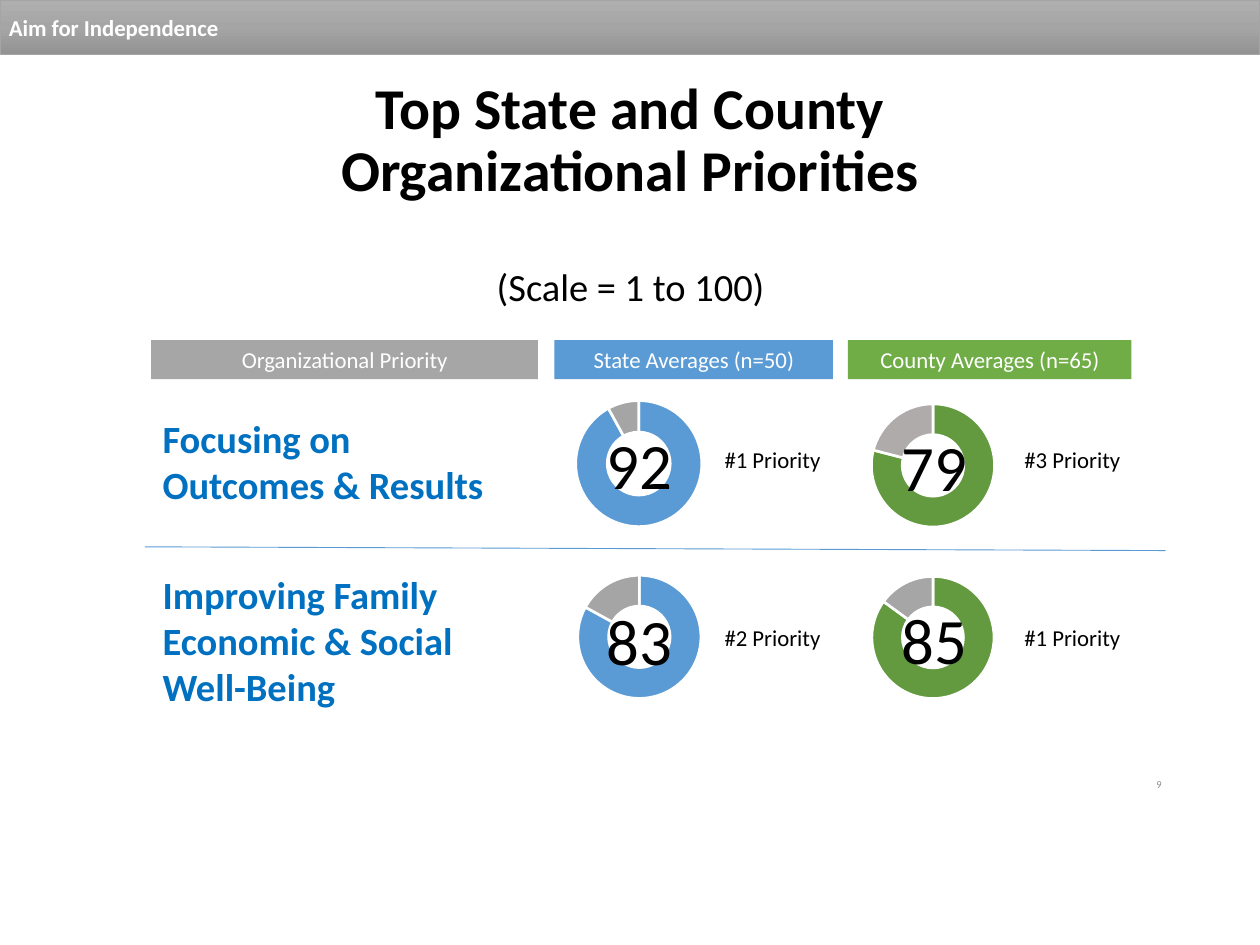
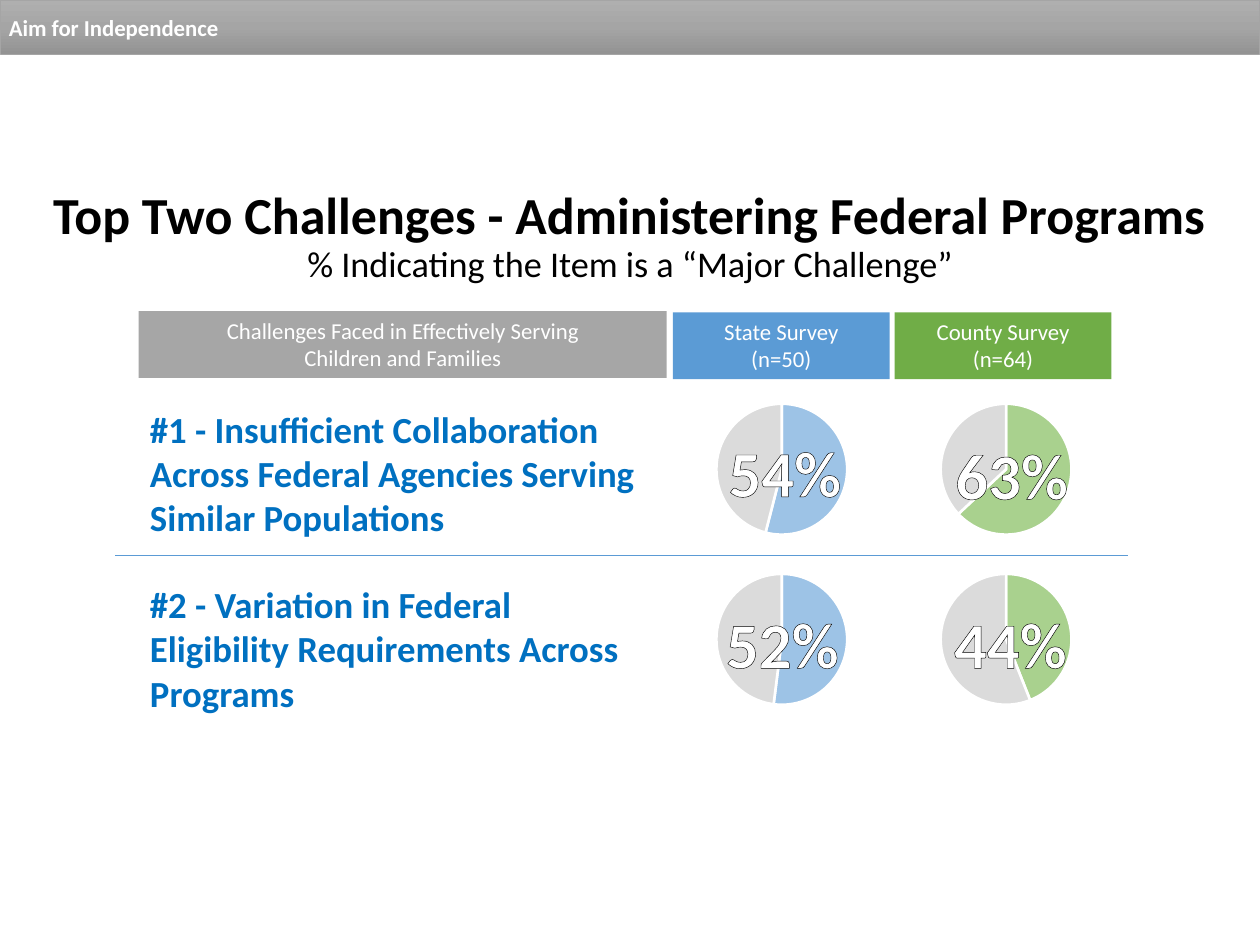
from copy import deepcopy
from dataclasses import dataclass

from lxml import etree
from pptx import Presentation
from pptx.chart.data import CategoryChartData
from pptx.dml.color import RGBColor
from pptx.enum.chart import XL_CHART_TYPE
from pptx.enum.shapes import MSO_CONNECTOR, MSO_SHAPE
from pptx.enum.text import MSO_ANCHOR, MSO_AUTO_SIZE, PP_ALIGN
from pptx.oxml.ns import qn
from pptx.util import Emu, Inches, Pt

DOUGHNUT, PIE = XL_CHART_TYPE.DOUGHNUT, XL_CHART_TYPE.PIE
RECTANGLE, STRAIGHT = MSO_SHAPE.RECTANGLE, MSO_CONNECTOR.STRAIGHT
TOP, MIDDLE = MSO_ANCHOR.TOP, MSO_ANCHOR.MIDDLE
LEFT, CENTER, RIGHT = PP_ALIGN.LEFT, PP_ALIGN.CENTER, PP_ALIGN.RIGHT
FIXED_SIZE = MSO_AUTO_SIZE.NONE

BLACK = RGBColor(0x00, 0x00, 0x00)
WHITE = RGBColor(0xFF, 0xFF, 0xFF)
STATE_BLUE = RGBColor(0x5B, 0x9B, 0xD5)
COUNTY_GREEN = RGBColor(0x70, 0xAD, 0x47)
DEEP_GREEN = RGBColor(0x63, 0x9A, 0x3F)
PALE_BLUE = RGBColor(0x9D, 0xC3, 0xE6)
PALE_GREEN = RGBColor(0xA9, 0xD1, 0x8E)
TOPIC_BLUE = RGBColor(0x00, 0x70, 0xC0)
BAND_LIGHT = RGBColor(0xAF, 0xAF, 0xAF)
BAND_DARK = RGBColor(0x93, 0x93, 0x93)
GRAY = RGBColor(0xA5, 0xA5, 0xA5)
HEADING_GRAY = RGBColor(0xA6, 0xA6, 0xA6)
WARM_GRAY = RGBColor(0xAF, 0xAB, 0xAB)
PALE_GRAY = RGBColor(0xDB, 0xDB, 0xDB)
PAGE_GRAY = RGBColor(0x8C, 0x8C, 0x8C)

FONT = "Calibri"
SLIDE_WIDTH, SLIDE_HEIGHT = Inches(10), Inches(7.5)
COLUMN, ROW = SLIDE_WIDTH / 100, SLIDE_HEIGHT / 75
PLOT_SHARE = 0.77


@dataclass(frozen=True)
class Box:
    """A place on the grid of 100 columns and 75 rows."""
    left: float
    top: float
    width: float
    height: float

    def lengths(self) -> tuple[Emu, Emu, Emu, Emu]:
        return (Emu(round(self.left * COLUMN)), Emu(round(self.top * ROW)),
                Emu(round(self.width * COLUMN)), Emu(round(self.height * ROW)))


@dataclass(frozen=True)
class TextStyle:
    size: float
    color: RGBColor = BLACK
    bold: bool = False
    align: PP_ALIGN = CENTER
    outlined: bool = False


@dataclass(frozen=True)
class Label:
    text: str
    box: Box
    style: TextStyle


@dataclass(frozen=True)
class Heading:
    text: str
    box: Box
    fill: RGBColor


@dataclass(frozen=True)
class Score:
    value: int
    chart: Box
    number: Box
    fill: RGBColor
    rest: RGBColor


@dataclass(frozen=True)
class SurveySlide:
    title_box: Box
    title_lines: list[tuple[str, TextStyle]]
    chart_type: XL_CHART_TYPE
    number_format: str
    number_style: TextStyle
    scores: list[Score]
    headings: list[Heading]
    labels: list[Label]
    divider: tuple[float, float, float, float]


BAND_TEXT = TextStyle(13, WHITE, bold=True, align=LEFT)
HEADING_TEXT = TextStyle(13, WHITE)
RANK = TextStyle(13)
PRIORITY = TextStyle(22, TOPIC_BLUE, bold=True, align=LEFT)
CHALLENGE = TextStyle(21, TOPIC_BLUE, bold=True, align=LEFT)
TITLE = TextStyle(33, bold=True)

RANK_TEXTS = {
    (55.9, 35): "#1 Priority", (79.7, 35): "#3 Priority",
    (55.9, 49.1): "#2 Priority", (79.7, 49.1): "#1 Priority",
}


def pie_score(value: int, column: int, row: int, number_left: float, number_top: float) -> Score:
    return Score(value, Box(55.4 + 17.8 * column, 30.5 + 13.5 * row, 13.3, 13.5),
                 Box(number_left, number_top, 13, 7.1),
                 (PALE_BLUE, PALE_GREEN)[column], PALE_GRAY)


SURVEY_SLIDES = [
    SurveySlide(
        title_box=Box(6.9, 4, 86.2, 14.5),
        title_lines=[("Top State and County", TITLE), ("Organizational Priorities", TITLE)],
        chart_type=DOUGHNUT,
        number_format="{}",
        number_style=TextStyle(37),
        scores=[
            Score(92, Box(40.2, 30.3, 21, 13), Box(42.3, 33.3, 16.9, 7.1), STATE_BLUE, GRAY),
            Score(79, Box(63.9, 30.6, 20.3, 12.7), Box(65.7, 33.5, 16.9, 7.1),
                  DEEP_GREEN, WARM_GRAY),
            Score(83, Box(40.6, 44.2, 20.3, 12.7), Box(42.3, 47.3, 16.9, 7.1), STATE_BLUE, GRAY),
            Score(85, Box(63.8, 44.3, 20.5, 12.6), Box(65.7, 47.2, 16.9, 7.1),
                  DEEP_GREEN, HEADING_GRAY),
        ],
        headings=[
            Heading("Organizational Priority", Box(12, 27, 30.7, 3.1), HEADING_GRAY),
            Heading("State Averages (n=50)", Box(44, 27, 22.1, 3.1), STATE_BLUE),
            Heading("County Averages (n=65)", Box(67.3, 27, 22.5, 3.1), COUNTY_GREEN),
        ],
        labels=[
            Label("(Scale = 1 to 100)", Box(32.3, 20.5, 35.5, 4.6), TextStyle(22)),
            Label("Focusing on Outcomes & Results", Box(12, 32.5, 27.8, 8.3), PRIORITY),
            Label("Improving Family Economic & Social Well-Being",
                  Box(12, 44.9, 27.9, 11.9), PRIORITY),
            *(Label(text, Box(left, top, 10.8, 3.1), RANK)
              for (left, top), text in RANK_TEXTS.items()),
            Label("9", Box(70.6, 60.8, 22.5, 2.9), TextStyle(6, PAGE_GRAY, align=RIGHT)),
        ],
        divider=(92.5, 43.7, 11.5, 43.4),
    ),
    SurveySlide(
        title_box=Box(0, 14.5, 100, 8.7),
        title_lines=[
            ("Top Two Challenges - Administering Federal Programs", TextStyle(29.7, bold=True)),
            ("% Indicating the Item is a “Major Challenge”", TextStyle(20.7)),
        ],
        chart_type=PIE,
        number_format="{}%",
        number_style=TextStyle(37, WHITE, bold=True, outlined=True),
        scores=[
            pie_score(54, 0, 0, 55.8, 33.9),
            pie_score(63, 1, 0, 73.8, 34.1),
            pie_score(52, 0, 1, 55.6, 47.5),
            pie_score(44, 1, 1, 73.7, 47.5),
        ],
        headings=[
            Heading("Challenges Faced in Effectively Serving\nChildren and Families",
                    Box(11, 24.7, 41.9, 5.3), HEADING_GRAY),
            Heading("State Survey\n(n=50)", Box(53.4, 24.8, 17.2, 5.3), STATE_BLUE),
            Heading("County Survey\n(n=64)", Box(71, 24.8, 17.2, 5.3), COUNTY_GREEN),
        ],
        labels=[
            Label("#1 - Insufficient Collaboration Across Federal Agencies Serving "
                  "Similar Populations", Box(11, 31.9, 41.9, 11.5), CHALLENGE),
            Label("#2 - Variation in Federal Eligibility Requirements Across Programs",
                  Box(11, 45.8, 41.9, 11.5), CHALLENGE),
        ],
        divider=(89.5, 44.1, 9.1, 44.1),
    ),
]


def format_run(run, style: TextStyle) -> None:
    font_format = {"name": FONT, "size": Pt(style.size), "bold": style.bold}
    for attribute, value in font_format.items():
        setattr(run.font, attribute, value)
    run.font.color.rgb = style.color
    if style.outlined:
        outline = etree.Element(qn("a:ln"), w=str(Pt(1)))
        solid = etree.SubElement(outline, qn("a:solidFill"))
        etree.SubElement(solid, qn("a:srgbClr"), val=str(BLACK))
        run.font._element.insert(0, outline)


def prepare_frame(frame, anchor: MSO_ANCHOR, side_margin: float = 0.09) -> None:
    frame_format = {
        "word_wrap": True, "auto_size": FIXED_SIZE, "vertical_anchor": anchor,
        "margin_left": Inches(side_margin), "margin_right": Inches(side_margin),
        "margin_top": Inches(0.04), "margin_bottom": Inches(0.04),
    }
    for attribute, value in frame_format.items():
        setattr(frame, attribute, value)


def write_text(frame, text: str, style: TextStyle) -> None:
    frame.text = text
    for paragraph in frame.paragraphs:
        paragraph.alignment = style.align
        for run in paragraph.runs:
            format_run(run, style)


def add_label(slide, label: Label) -> None:
    frame = slide.shapes.add_textbox(*label.box.lengths()).text_frame
    prepare_frame(frame, TOP if label.style.size > 6 else MIDDLE)
    write_text(frame, label.text, label.style)


def add_plain_rectangle(slide, box: Box):
    rectangle = slide.shapes.add_shape(RECTANGLE, *box.lengths())
    rectangle.shadow.inherit = False
    return rectangle


def add_heading(slide, heading: Heading) -> None:
    cell = add_plain_rectangle(slide, heading.box)
    cell.fill.solid()
    cell.fill.fore_color.rgb = heading.fill
    cell.line.fill.background()
    prepare_frame(cell.text_frame, TOP)
    write_text(cell.text_frame, heading.text, HEADING_TEXT)


def add_band(slide) -> None:
    band = add_plain_rectangle(slide, Box(0, 0, 100, 4.3))
    band.fill.gradient()
    band.fill.gradient_angle = 270
    for stop, color in zip(band.fill.gradient_stops, (BAND_LIGHT, BAND_DARK)):
        stop.color.rgb = color
    stops = band.fill._xPr.find(qn("a:gradFill")).find(qn("a:gsLst"))
    for stop, position in zip(stops, (0, 100000)):
        stop.set("pos", str(position))
    halfway = deepcopy(stops[0])
    halfway.set("pos", "50000")
    halfway[0].set("val", str(GRAY))
    stops.insert(1, halfway)
    band.line.color.rgb = GRAY
    band.line.width = Pt(0.5)
    prepare_frame(band.text_frame, MIDDLE, side_margin=0.07)
    write_text(band.text_frame, "Aim for Independence", BAND_TEXT)


def set_title(slide, box: Box, lines: list[tuple[str, TextStyle]]) -> None:
    title = slide.shapes.title
    title.left, title.top, title.width, title.height = box.lengths()
    prepare_frame(title.text_frame, MIDDLE)
    paragraph = title.text_frame.paragraphs[0]
    paragraph.alignment = CENTER
    paragraph.line_spacing = 0.9
    for index, (text, style) in enumerate(lines):
        if index:
            paragraph.add_line_break()
            paragraph._p[-1].append(deepcopy(paragraph.runs[-1].font._element))
        run = paragraph.add_run()
        run.text = text
        format_run(run, style)


def center_plot(chart, box: Box) -> None:
    """Fix a round plot in the middle of the chart's frame."""
    plot_area = chart._chartSpace.chart.plotArea
    for old_layout in plot_area.findall(qn("c:layout")):
        plot_area.remove(old_layout)
    layout = etree.Element(qn("c:layout"))
    manual = etree.SubElement(layout, qn("c:manualLayout"))
    diameter = PLOT_SHARE * box.height
    width, height = diameter / box.width, PLOT_SHARE
    settings = {"layoutTarget": "inner", "xMode": "edge", "yMode": "edge",
                "x": (1 - width) / 2, "y": (1 - height) / 2, "w": width, "h": height}
    for tag, value in settings.items():
        etree.SubElement(manual, qn(f"c:{tag}"), val=str(value))
    plot_area.insert(0, layout)


def add_score_chart(slide, score: Score, chart_type: XL_CHART_TYPE) -> None:
    shares = CategoryChartData()
    shares.categories = ["1", "2"]
    shares.add_series("Series 1", (score.value, 100 - score.value))
    chart = slide.shapes.add_chart(chart_type, *score.chart.lengths(), shares).chart
    chart.has_legend = chart.has_title = False
    chart.font.name, chart.font.size = FONT, Pt(10)
    chart.font.color.rgb = BLACK
    plot = chart.plots[0]
    plot.vary_by_categories = True
    for index, color in enumerate((score.fill, score.rest)):
        slice_format = plot.series[0].points[index].format
        slice_format.fill.solid()
        slice_format.fill.fore_color.rgb = color
        slice_format.line.color.rgb = WHITE
        slice_format.line.width = Pt(1.5)
    for hole in chart._chartSpace.iter(qn("c:holeSize")):
        hole.set("val", "75")
    center_plot(chart, score.chart)


def add_divider(slide, ends: tuple[float, float, float, float]) -> None:
    begin_end = Box(*ends)
    x1, y1, x2, y2 = begin_end.lengths()
    divider = slide.shapes.add_connector(STRAIGHT, x1, y1, x2, y2)
    divider.line.color.rgb = STATE_BLUE
    divider.line.width = Pt(0.5)
    etree.SubElement(divider._element.spPr, qn("a:effectLst"))


def build_slide(presentation, content: SurveySlide) -> None:
    slide = presentation.slides.add_slide(presentation.slide_layouts[5])
    add_band(slide)
    set_title(slide, content.title_box, content.title_lines)
    for score in content.scores:
        add_score_chart(slide, score, content.chart_type)
        number = content.number_format.format(score.value)
        add_label(slide, Label(number, score.number, content.number_style))
    for label in content.labels:
        add_label(slide, label)
    for heading in content.headings:
        add_heading(slide, heading)
    add_divider(slide, content.divider)


def main() -> None:
    presentation = Presentation()
    presentation.slide_width, presentation.slide_height = SLIDE_WIDTH, SLIDE_HEIGHT
    for content in SURVEY_SLIDES:
        build_slide(presentation, content)
    presentation.save("out.pptx")


if __name__ == "__main__":
    main()
